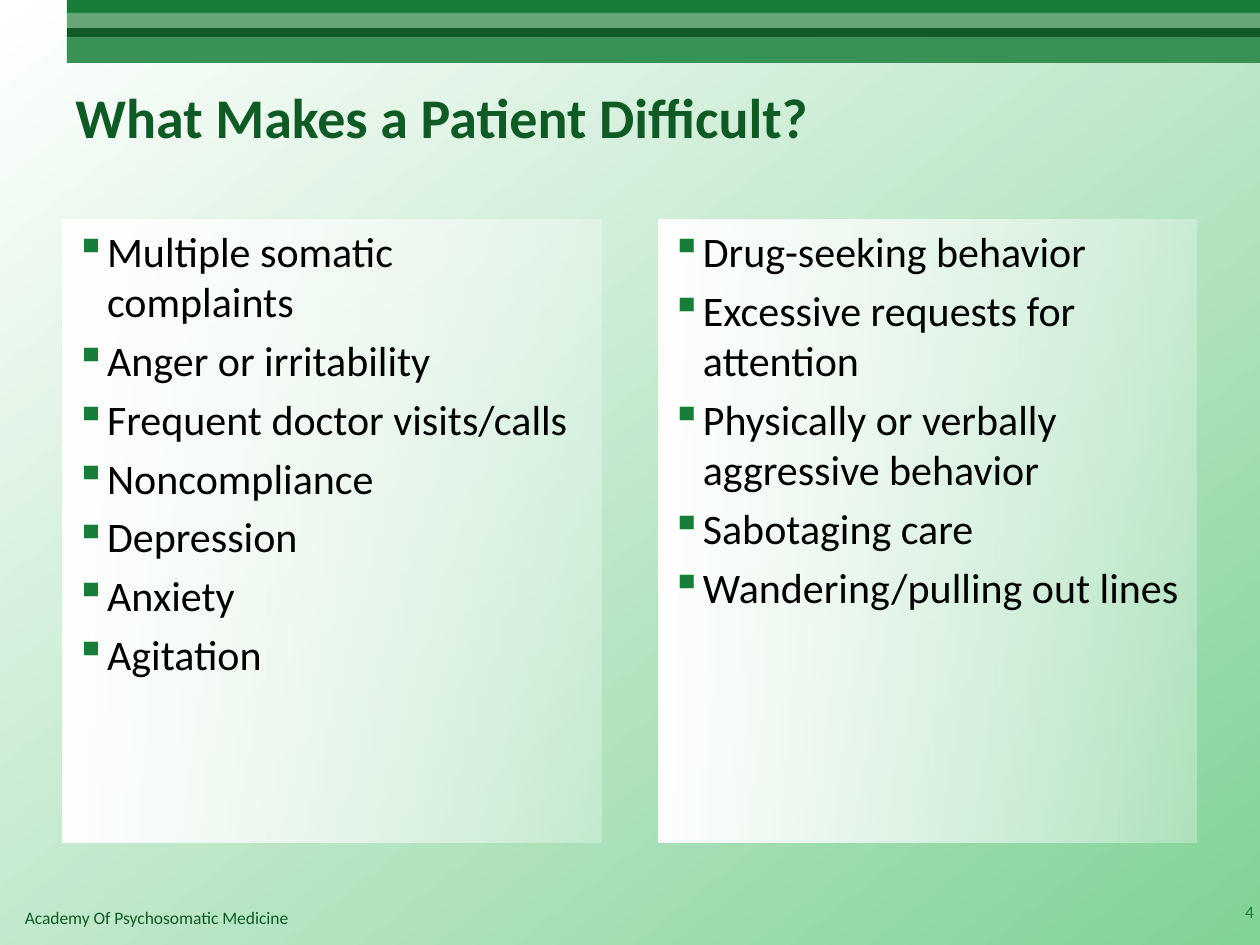
"""Build the slide on what makes a patient difficult."""
from itertools import pairwise

from lxml import etree
from pptx import Presentation
from pptx.dml.color import RGBColor
from pptx.enum.shapes import MSO_SHAPE
from pptx.enum.text import MSO_ANCHOR, PP_ALIGN
from pptx.oxml.ns import qn
from pptx.util import Cm, Pt

RECT = MSO_SHAPE.RECTANGLE
TOP, MID = MSO_ANCHOR.TOP, MSO_ANCHOR.MIDDLE
LEFT, RIGHT = PP_ALIGN.LEFT, PP_ALIGN.RIGHT

HUES = {
    "white": "FFFFFF", "black": "000000", "mint": "81D297",
    "green": "177D38", "sage": "66A677", "dark": "105A25", "leaf": "389155",
}
WIDE, HIGH = 25.4, 19.05
BANDS = ["green", "sage", "dark", "leaf"]
EDGES = [0, 0.26, 0.57, 0.76, 1.27]
BAND_X = 1.35
SIDE = 1.27
PANEL = {"y": 4.42, "w": 10.85, "h": 12.57}
FADE = 30
LISTS = [
    ["Multiple somatic complaints", "Anger or irritability",
     "Frequent doctor visits/calls", "Noncompliance", "Depression",
     "Anxiety", "Agitation"],
    ["Drug-seeking behavior", "Excessive requests for attention",
     "Physically or verbally aggressive behavior", "Sabotaging care",
     "Wandering/pulling out lines"],
]
LABELS = [
    ("Academy Of Psychosomatic Medicine", (0.25, 18.16, 17.63, 0.69),
     "foot", TOP, LEFT),
    ("What Makes a Patient Difficult?", (1.27, 0.76, 22.86, 3.18),
     "title", MID, LEFT),
    ("4", (24.51, 17.86, 1.02, 1.02), "page", MID, RIGHT),
]
FORMS = {
    "foot": {"size": Pt(10), "bold": False, "hue": "dark"},
    "title": {"size": Pt(32), "bold": True, "hue": "dark"},
    "page": {"size": Pt(10), "bold": False, "hue": "green"},
    "item": {"size": Pt(24), "bold": False, "hue": "black"},
}


def rgb(hue):
    return RGBColor.from_string(HUES[hue])


def blend(fill, hues, angle):
    fill.gradient()
    fill.gradient_angle = angle
    for stop, hue in zip(fill.gradient_stops, hues):
        stop.color.rgb = rgb(hue)


def style(para, form):
    para.font.name = "Calibri"
    for key, value in FORMS[form].items():
        if key == "hue":
            para.font.color.rgb = rgb(value)
        else:
            setattr(para.font, key, value)


def bullet(para):
    props = para._p.get_or_add_pPr()
    props.set("marL", str(Cm(0.64)))
    props.set("indent", str(-Cm(0.64)))
    tint = etree.SubElement(props, qn("a:buClr"))
    etree.SubElement(tint, qn("a:srgbClr"), val=HUES["green"])
    etree.SubElement(props, qn("a:buChar"), char="▪")


def box(slide, x, y, w, h):
    shape = slide.shapes.add_shape(RECT, Cm(x), Cm(y), Cm(w), Cm(h))
    shape.shadow.inherit = False
    shape.line.fill.background()
    return shape


def label(slide, text, place, form, anchor, align):
    frame = slide.shapes.add_textbox(*map(Cm, place)).text_frame
    frame.word_wrap = True
    frame.vertical_anchor = anchor
    para = frame.paragraphs[0]
    para.text = text
    para.alignment = align
    style(para, form)


def panel(slide, x, items):
    shape = box(slide, x, **PANEL)
    blend(shape.fill, ["white", "white"], 0)
    last = shape._element.findall(".//" + qn("a:gs"))[-1]
    etree.SubElement(last[0], qn("a:alpha"), val=str(FADE * 1000))
    frame = shape.text_frame
    frame.word_wrap = True
    frame.vertical_anchor = TOP
    for i, item in enumerate(items):
        para = frame.add_paragraph() if i else frame.paragraphs[0]
        para.text = item
        para.alignment = LEFT
        if i:
            para.space_before = Pt(4.8)
        bullet(para)
        style(para, "item")


def main():
    deck = Presentation()
    deck.slide_width, deck.slide_height = Cm(WIDE), Cm(HIGH)
    slide = deck.slides.add_slide(deck.slide_layouts[6])
    blend(slide.background.fill, ["white", "mint"], 360 - 52)
    for hue, (top, end) in zip(BANDS, pairwise(EDGES)):
        band = box(slide, BAND_X, top, WIDE - BAND_X, end - top)
        band.fill.solid()
        band.fill.fore_color.rgb = rgb(hue)
    for entry in LABELS:
        label(slide, *entry)
    step = WIDE - 2 * SIDE - PANEL["w"]
    for i, items in enumerate(LISTS):
        panel(slide, SIDE + i * step, items)
    deck.save("out.pptx")


if __name__ == "__main__":
    main()
